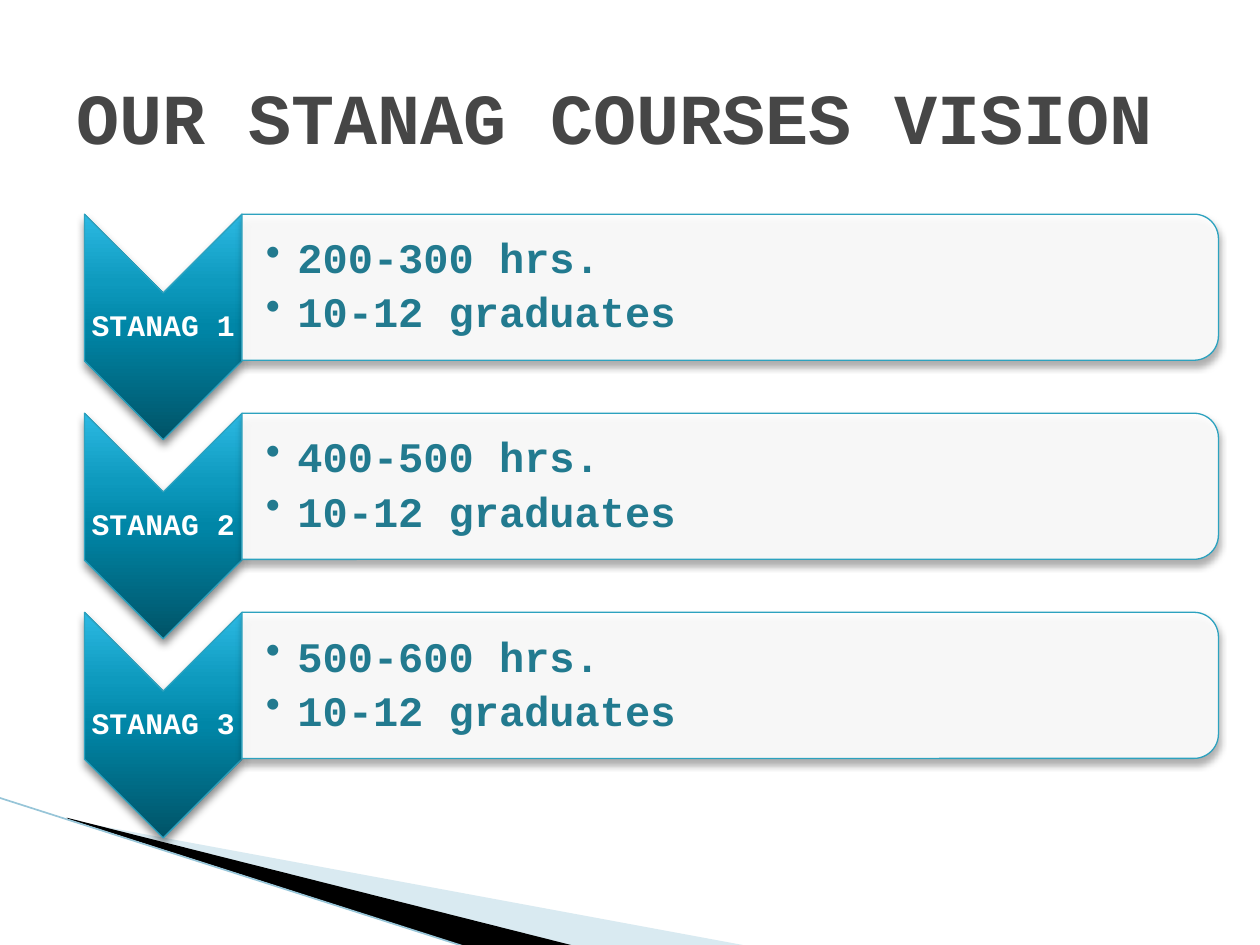
from dataclasses import dataclass

import lxml.etree
import pptx
import pptx.dml.color
import pptx.enum.dml
import pptx.enum.shapes
import pptx.enum.text
import pptx.oxml
import pptx.oxml.ns
import pptx.util

Inch = pptx.util.Inches
Pt = pptx.util.Pt
Rgb = pptx.dml.color.RGBColor.from_string
Kind = pptx.enum.shapes.MSO_SHAPE
Align = pptx.enum.text.PP_ALIGN
qn = pptx.oxml.ns.qn


@dataclass(frozen=True)
class Theme:
    font: str = "Courier New"
    title: str = "464646"
    text: str = "227A8F"
    white: str = "FFFFFF"
    black: str = "000000"
    edge: str = "2DA2BF"
    wedge: str = "A0CBDC"
    rule: str = "97C5D8"
    ramp: tuple = ((0, "005367"), (50, "0086A7"), (70, "0E9ABE"), (100, "2CB9E3"))
    head: int = 41
    body: int = 24
    label: int = 17


@dataclass(frozen=True)
class Box:
    left: float
    top: float
    width: float
    height: float

    def inches(self) -> list:
        return [Inch(v) for v in (self.left, self.top, self.width, self.height)]

    def turned(self) -> "Box":
        shift = (self.width - self.height) / 2
        return Box(self.left + shift, self.top - shift, self.height, self.width)


@dataclass(frozen=True)
class Step:
    name: str
    hours: str
    people: str = "10-12 graduates"


@dataclass(frozen=True)
class Grid:
    left: float = 0.67
    split: float = 1.92
    right: float = 9.67
    top: float = 1.7
    pitch: float = 1.58
    panel: float = 1.16
    arrow: float = 1.79


THEME = Theme()
GRID = Grid()
STEPS = (
    Step("STANAG 1", "200-300 hrs."),
    Step("STANAG 2", "400-500 hrs."),
    Step("STANAG 3", "500-600 hrs."),
)


def fade(color, share: int) -> None:
    node = lxml.etree.SubElement(color, qn("a:alpha"))
    node.set("val", str(share * 1000))


def solid(shape, color: str, share: int = 100) -> None:
    shape.fill.solid()
    shape.fill.fore_color.rgb = Rgb(color)
    if share < 100:
        fade(shape.fill._xPr.find(qn("a:solidFill"))[0], share)


def ramp(shape) -> None:
    shape.fill.gradient()
    shape.fill.gradient_angle = 180
    stops = shape.fill._xPr.find(qn("a:gradFill")).find(qn("a:gsLst"))
    for stop in list(stops):
        stops.remove(stop)
    for place, color in THEME.ramp:
        stop = lxml.etree.SubElement(stops, qn("a:gs"), pos=str(place * 1000))
        lxml.etree.SubElement(stop, qn("a:srgbClr"), val=color)


def shade(shape, share: int, blur: int) -> None:
    shape.shadow.inherit = False
    effects = shape._element.spPr.find(qn("a:effectLst"))
    outer = lxml.etree.SubElement(
        effects, qn("a:outerShdw"), blurRad=str(Pt(blur)), dist=str(Pt(3)),
        dir="5400000", rotWithShape="0")
    fade(lxml.etree.SubElement(outer, qn("a:srgbClr"), val=THEME.black), share)


def block(slide, kind, box: Box):
    shape = slide.shapes.add_shape(kind, *box.turned().inches())
    shape.rotation = 90
    shape.line.color.rgb = Rgb(THEME.edge)
    shape.line.width = Pt(0.75)
    return shape


def write(slide, box: Box, lines: list, size: int, color: str, pad: tuple = (0.1, 0.05),
          align=Align.LEFT, bullet: bool = False, space: float = 1, after: int = 0) -> None:
    frame = slide.shapes.add_textbox(*box.inches()).text_frame
    frame.word_wrap = True
    frame.vertical_anchor = pptx.enum.text.MSO_ANCHOR.MIDDLE
    frame.margin_left = Inch(pad[0])
    frame.margin_right = frame.margin_top = frame.margin_bottom = Inch(pad[1])
    frame.text = "\n".join(lines)
    for para in frame.paragraphs:
        para.alignment = align
        para.line_spacing = space
        para.space_after = Pt(after)
        if bullet:
            props = para._p.get_or_add_pPr()
            props.set("marL", str(Inch(0.25)))
            props.set("indent", str(Inch(-0.25)))
            lxml.etree.SubElement(props, qn("a:buChar"), char="•")
        for run in para.runs:
            run.font.name = THEME.font
            run.font.size = Pt(size)
            run.font.bold = True
            run.font.color.rgb = Rgb(color)


def wedge(slide, points: list, color: str, share: int = 100) -> None:
    first, *rest = [(round(x * 100), round(y * 100)) for x, y in points]
    path = slide.shapes.build_freeform(*first, scale=Inch(0.01))
    path.add_line_segments(rest, close=False)
    shape = path.convert_to_shape()
    shape.shadow.inherit = False
    shape.line.fill.background()
    solid(shape, color, share)


def decor(slide) -> None:
    wedge(slide, [(0.55, 6.51), (5.95, 7.51), (4.56, 7.51), (0.55, 6.5)], THEME.wedge, 40)
    wedge(slide, [(0.53, 6.49), (4.57, 7.51), (3.72, 7.52), (0.54, 6.5)], THEME.black)
    ends = [Inch(v) for v in (-0.01, 6.33, 3.71, 7.52)]
    rule = slide.shapes.add_connector(pptx.enum.shapes.MSO_CONNECTOR.STRAIGHT, *ends)
    rule.line.color.rgb = Rgb(THEME.rule)
    rule.line.width = Pt(0.95)
    lxml.etree.SubElement(rule._element.spPr, qn("a:effectLst"))


def row(slide, index: int, step: Step) -> None:
    top = GRID.top + index * GRID.pitch
    wide = GRID.split - GRID.left
    arrow = block(slide, Kind.CHEVRON, Box(GRID.left, top, wide, GRID.arrow))
    ramp(arrow)
    shade(arrow, 45, 5)
    write(slide, Box(GRID.left, top + wide / 2, wide, GRID.arrow - wide), [step.name],
          THEME.label, THEME.white, (0.01, 0.01), Align.CENTER, space=0.9)
    long = GRID.right - GRID.split
    panel = block(slide, Kind.ROUND_2_SAME_RECTANGLE, Box(GRID.split, top, long, GRID.panel))
    solid(panel, THEME.white, 90)
    shade(panel, 35, 4)
    inset = 0.06
    write(slide, Box(GRID.split, top + inset, long - inset, GRID.panel - 2 * inset),
          [step.hours, step.people], THEME.body, THEME.text, (0.19, 0.02),
          bullet=True, space=0.9, after=5)


def main() -> None:
    deck = pptx.Presentation()
    deck.slide_width, deck.slide_height = Inch(10), Inch(7.5)
    slide = deck.slides.add_slide(deck.slide_layouts[6])
    decor(slide)
    for index, step in enumerate(STEPS):
        row(slide, index, step)
    write(slide, Box(0.51, 0.29, 9, 1.25), ["OUR STANAG COURSES VISION"],
          THEME.head, THEME.title)
    deck.save("out.pptx")


if __name__ == "__main__":
    main()
